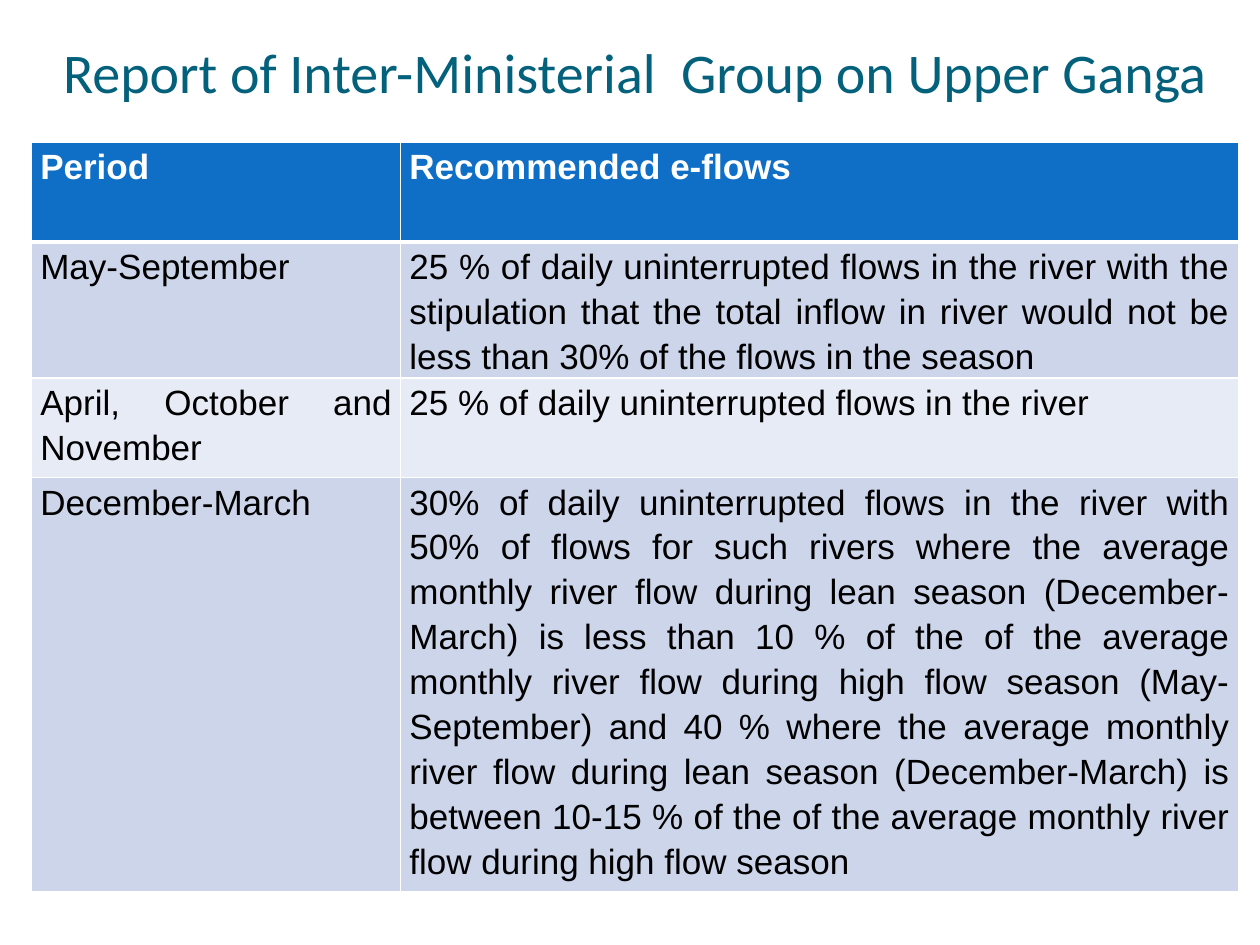
"""Build a slide with a table of recommended e-flows by period."""
from lxml import etree
from pptx import Presentation
from pptx.dml.color import RGBColor as Rgb
from pptx.enum.text import MSO_ANCHOR as Anchor, PP_ALIGN as Align
from pptx.oxml.ns import qn
from pptx.util import Inches, Pt

TITLE = "Report of Inter-Ministerial  Group on Upper Ganga"
ROWS = [
    ("Period", "Recommended e-flows"),
    ("May-September",
     "25 % of daily uninterrupted flows in the river with the stipulation "
     "that the total inflow in river would not be less than 30% of the flows "
     "in the season"),
    ("April, October and November",
     "25 % of daily uninterrupted flows in the river"),
    ("December-March",
     "30% of daily uninterrupted flows in the river with 50% of flows for such "
     "rivers where the average monthly river flow during lean season "
     "(December-March) is less than 10 % of the of the average monthly river "
     "flow during high flow season (May-September) and 40 % where the average "
     "monthly river flow during lean season (December-March) is between "
     "10-15 % of the of the average monthly river flow during high flow season"),
]
WIDTHS = [2.93, 6.65]
HEIGHTS = [0.79, 1.08, 0.79, 3.29]
COLORS = {"title": "04617B", "head": "0F6FC6", "odd": "CCD5EA",
          "even": "E7EBF5", "white": "FFFFFF", "black": "000000"}


def write(frame, text, size=20, font="Arial", color="black", bold=False,
          align=Align.JUSTIFY, line=1.15, after=10):
    frame.word_wrap = True
    para = frame.paragraphs[0]
    para.alignment = align
    para.line_spacing = line
    para.space_before, para.space_after = Pt(0), Pt(after)
    run = para.add_run()
    run.text = text
    run.font.size, run.font.name, run.font.bold = Pt(size), font, bold
    run.font.color.rgb = Rgb.from_string(COLORS[color])


def border(cell, widths):
    props = cell._tc.get_or_add_tcPr()
    for spot, (side, width) in enumerate(zip("LRTB", widths)):
        edge = etree.Element(qn(f"a:ln{side}"), w=str(Pt(width)))
        fill = etree.SubElement(edge, qn("a:solidFill"))
        etree.SubElement(fill, qn("a:srgbClr"), val=COLORS["white"])
        props.insert(spot, edge)


def add_title(slide):
    title = slide.shapes.title
    title.left, title.top = Inches(0.5), Inches(0.25)
    title.width, title.height = Inches(9.25), Inches(0.58)
    frame = title.text_frame
    frame.vertical_anchor = Anchor.BOTTOM
    frame.margin_left = frame.margin_right = frame.margin_bottom = 0
    frame.margin_top = Inches(0.05)
    write(frame, TITLE, size=32, font="Calibri", color="title",
          align=Align.LEFT, line=1.0, after=0)


def add_grid(slide):
    grid = slide.shapes.add_table(
        len(ROWS), len(WIDTHS), Inches(0.25), Inches(1.13),
        Inches(sum(WIDTHS)), Inches(sum(HEIGHTS))).table
    for col, width in zip(grid.columns, WIDTHS):
        col.width = Inches(width)
    for num, (row, height) in enumerate(zip(grid.rows, HEIGHTS)):
        row.height = Inches(height)
        head = num == 0
        shade = "head" if head else "odd" if num % 2 else "even"
        for cell, text in zip(row.cells, ROWS[num]):
            cell.fill.solid()
            cell.fill.fore_color.rgb = Rgb.from_string(COLORS[shade])
            cell.margin_left = cell.margin_right = Inches(0.07)
            cell.margin_top = cell.margin_bottom = 0
            border(cell, (1, 1, 3 if num == 1 else 1, 3 if head else 1))
            write(cell.text_frame, text, bold=head,
                  color="white" if head else "black")


def main():
    deck = Presentation()
    deck.slide_width, deck.slide_height = Inches(10), Inches(7.5)
    slide = deck.slides.add_slide(deck.slide_layouts[5])
    add_title(slide)
    add_grid(slide)
    deck.save("out.pptx")


if __name__ == "__main__":
    main()
